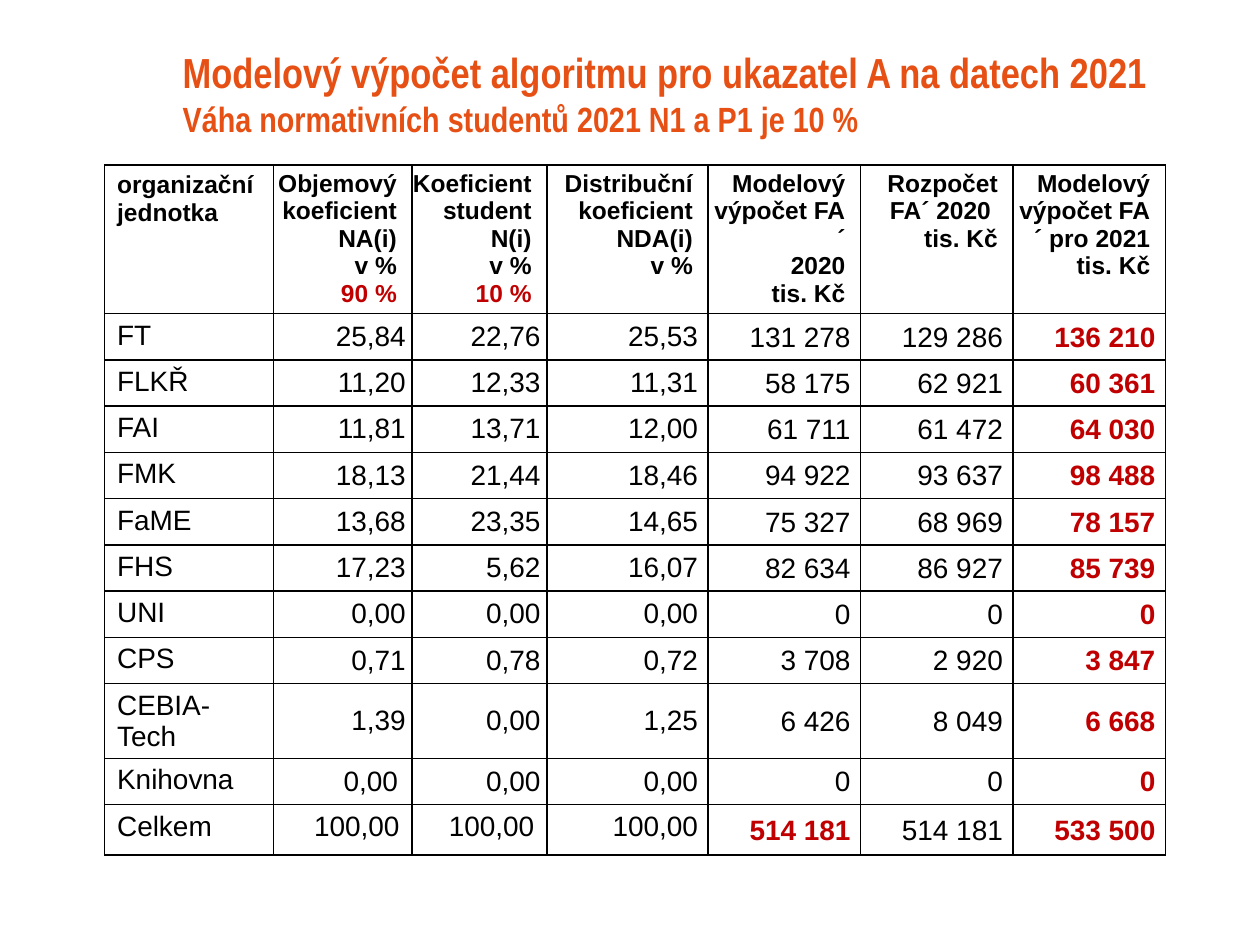
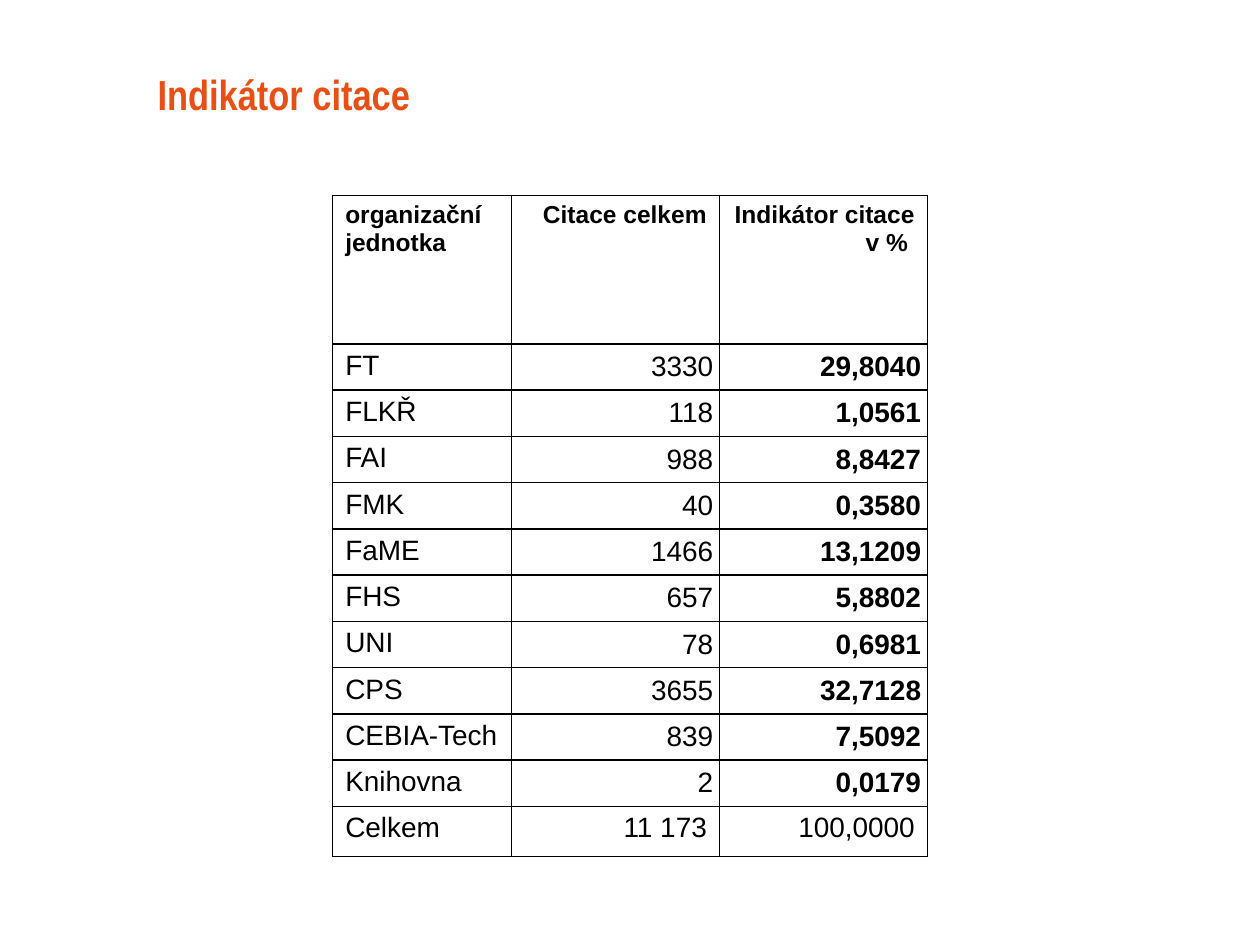
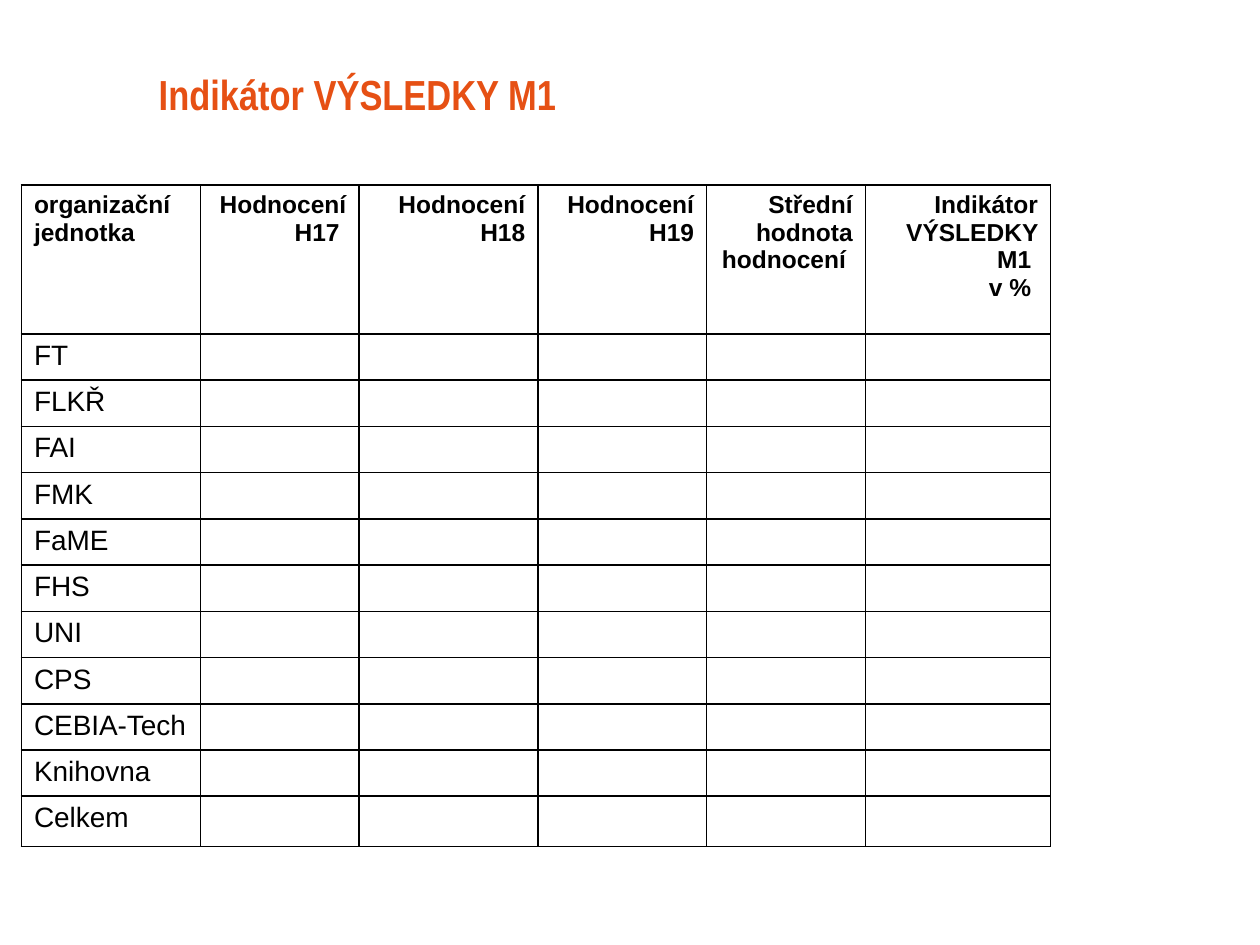
from lxml import etree
from pptx import Presentation
from pptx.dml.color import RGBColor
from pptx.enum.text import MSO_ANCHOR, MSO_AUTO_SIZE, PP_ALIGN
from pptx.oxml.ns import qn
from pptx.util import Inches, Pt

LEFT, RIGHT = PP_ALIGN.LEFT, PP_ALIGN.RIGHT
TOP, MIDDLE = MSO_ANCHOR.TOP, MSO_ANCHOR.MIDDLE
NO_AUTOFIT = MSO_AUTO_SIZE.NONE

COLORS = {"title": "E65014", "text": "000000", "accent": "C00000"}
TITLE_FONT, BODY_FONT = "Arial Narrow", "Arial"
TITLE_BOX = (1.15, 0.36, 8.63, 0.76)
TABLE_H, HEAD_H, TOTAL_H = 5.25, 1.18, 0.4

WIDE = (0.1, 0.05, 0.1, 0.05)
WIDE_NARROW_RIGHT = (0.1, 0.05, 0.08, 0.05)
HEAD_TIGHT = (0, 0.04, 0.12, 0)
TIGHT = (0.05, 0, 0.05, 0)
TIGHT_RIGHT = (0.05, 0, 0.08, 0)
AMOUNT = (0.01, 0.01, 0.08, 0)

UNITS = ["FT", "FLKŘ", "FAI", "FMK", "FaME", "FHS", "UNI", "CPS",
         "CEBIA-Tech", "Knihovna", "Celkem"]
TOTAL = len(UNITS)
UNIT_HEAD = ["organizační jednotka"]
WEIGHTS = ("90 %", "10 %")

SLIDES = [
    {
        "title": [("Modelový výpočet algoritmu pro ukazatel A na datech 2021 ", 24),
                  ("Váha normativních studentů 2021 N1 a P1 je 10 %", 20)],
        "indent": 0.2,
        "at": (0.83, 1.31),
        "cols": [1.34, 1.1, 1.07, 1.28, 1.21, 1.21, 1.21],
        "head": [["Objemový koeficient NA(i)", "v %", "90 %"],
                 ["Koeficient student N(i)", "v %", "10 %"],
                 ["Distribuční koeficient NDA(i)", "v %"],
                 ["Modelový výpočet FA´", "2020", "tis. Kč"],
                 ["Rozpočet FA´ 2020 ", "tis. Kč"],
                 ["Modelový výpočet FA´ pro 2021", "tis. Kč"]],
        "head_inset": HEAD_TIGHT,
        "insets": [TIGHT] * 2 + [TIGHT_RIGHT] + [AMOUNT] * 3,
        "total_insets": [WIDE] * 2 + [WIDE_NARROW_RIGHT] + [AMOUNT] * 3,
        "strong": {(r, 6) for r in range(1, TOTAL + 1)} | {(TOTAL, 4)},
        "strong_color": "accent",
        "rows": [
            ["25,84", "22,76", "25,53", "131 278", "129 286", "136 210"],
            ["11,20", "12,33", "11,31", "58 175", "62 921", "60 361"],
            ["11,81", "13,71", "12,00", "61 711", "61 472", "64 030"],
            ["18,13", "21,44", "18,46", "94 922", "93 637", "98 488"],
            ["13,68", "23,35", "14,65", "75 327", "68 969", "78 157"],
            ["17,23", "5,62", "16,07", "82 634", "86 927", "85 739"],
            ["0,00", "0,00", "0,00", "0", "0", "0"],
            ["0,71", "0,78", "0,72", "3 708", "2 920", "3 847"],
            ["1,39", "0,00", "1,25", "6 426", "8 049", "6 668"],
            ["0,00 ", "0,00", "0,00", "0", "0", "0"],
            ["100,00", "100,00", "100,00", "514 181", "514 181", "533 500"],
        ],
    },
    {
        "title": [("Indikátor citace", 24)],
        "indent": 0,
        "at": (2.64, 1.55),
        "cols": [1.42, 1.65, 1.65],
        "head": [["Citace celkem"], ["Indikátor citace v % "]],
        "head_inset": WIDE,
        "insets": [TIGHT] * 2,
        "total_insets": [WIDE] * 2,
        "strong": {(r, 2) for r in range(1, TOTAL)},
        "strong_color": "text",
        "rows": [
            ["3330", "29,8040"], ["118", "1,0561"], ["988", "8,8427"],
            ["40", "0,3580"], ["1466", "13,1209"], ["657", "5,8802"],
            ["78", "0,6981"], ["3655", "32,7128"], ["839", "7,5092"],
            ["2", "0,0179"], ["11 173", "100,0000"],
        ],
    },
    {
        "title": [("Indikátor VÝSLEDKY M1", 24)],
        "indent": 0.01,
        "at": (0.17, 1.47),
        "cols": [1.42, 1.26, 1.42, 1.34, 1.26, 1.47],
        "head": [["Hodnocení H17 "], ["Hodnocení H18"], ["Hodnocení H19"],
                 ["Střední hodnota hodnocení "],
                 ["Indikátor VÝSLEDKY M1 ", "v % "]],
        "head_inset": WIDE,
        "insets": [TIGHT] * 5,
        "total_insets": [TIGHT] * 5,
        "strong": set(),
        "strong_color": "text",
        "rows": [[""] * 5 for _ in UNITS],
    },
]


def add_run(p, text, size, font, color, bold):
    r = p.add_run()
    r.text = text
    r.font.size = Pt(size)
    r.font.name = font
    r.font.bold = bold
    r.font.color.rgb = RGBColor.from_string(COLORS[color])


def set_title(s, lines, indent):
    title = s.shapes.title
    title.left, title.top, title.width, title.height = map(Inches, TITLE_BOX)
    tf = title.text_frame
    tf.word_wrap = True
    tf.auto_size = NO_AUTOFIT
    tf.vertical_anchor = MIDDLE
    p = tf.paragraphs[0]
    p.alignment = LEFT
    p._p.get_or_add_pPr().set("marL", str(Inches(indent)))
    for i, (text, size) in enumerate(lines):
        if i:
            p.add_line_break()
        add_run(p, text, size, TITLE_FONT, "title", True)


def set_borders(cell):
    tcPr = cell._tc.get_or_add_tcPr()
    for side in ("a:lnL", "a:lnR", "a:lnT", "a:lnB"):
        ln = etree.SubElement(tcPr, qn(side), w=str(Pt(1)))
        fill = etree.SubElement(ln, qn("a:solidFill"))
        etree.SubElement(fill, qn("a:srgbClr"), val=COLORS["text"])


def fill_cell(cell, lines, inset, align, anchor, size, bold, color):
    set_borders(cell)
    cell.fill.background()
    (cell.margin_left, cell.margin_top,
     cell.margin_right, cell.margin_bottom) = map(Inches, inset)
    cell.vertical_anchor = anchor
    tf = cell.text_frame
    for i, text in enumerate(lines):
        p = tf.add_paragraph() if i else tf.paragraphs[0]
        p.alignment = align
        if text:
            shade = "accent" if text in WEIGHTS else color
            add_run(p, text, size, BODY_FONT, shade, bold)


def add_units_table(s, data):
    x, y = data["at"]
    cols = data["cols"]
    shape = s.shapes.add_table(TOTAL + 1, len(cols), Inches(x), Inches(y),
                               Inches(sum(cols)), Inches(TABLE_H))
    table = shape.table
    table.first_row = table.horz_banding = False
    for col, width in zip(table.columns, cols):
        col.width = Inches(width)
    unit_h = (TABLE_H - HEAD_H - TOTAL_H) / (TOTAL - 1)
    heights = [HEAD_H] + [unit_h] * (TOTAL - 1) + [TOTAL_H]
    for row, height in zip(table.rows, heights):
        row.height = Inches(height)

    for c, lines in enumerate([UNIT_HEAD] + data["head"]):
        inset, align = (data["head_inset"], RIGHT) if c else (WIDE, LEFT)
        fill_cell(table.cell(0, c), lines, inset, align, TOP, 14, True, "text")
    for r, (unit, values) in enumerate(zip(UNITS, data["rows"]), 1):
        fill_cell(table.cell(r, 0), [unit], WIDE, LEFT, TOP, 16, False, "text")
        insets = data["total_insets" if r == TOTAL else "insets"]
        for c, (value, inset) in enumerate(zip(values, insets), 1):
            strong = (r, c) in data["strong"]
            anchor = TOP if inset in (WIDE, WIDE_NARROW_RIGHT) else MIDDLE
            color = data["strong_color"] if strong else "text"
            fill_cell(table.cell(r, c), [value], inset, RIGHT, anchor, 16, strong, color)


def main():
    prs = Presentation()
    prs.slide_width, prs.slide_height = Inches(10), Inches(7.5)
    for data in SLIDES:
        s = prs.slides.add_slide(prs.slide_layouts[5])
        set_title(s, data["title"], data["indent"])
        add_units_table(s, data)
    prs.save("out.pptx")


if __name__ == "__main__":
    main()
